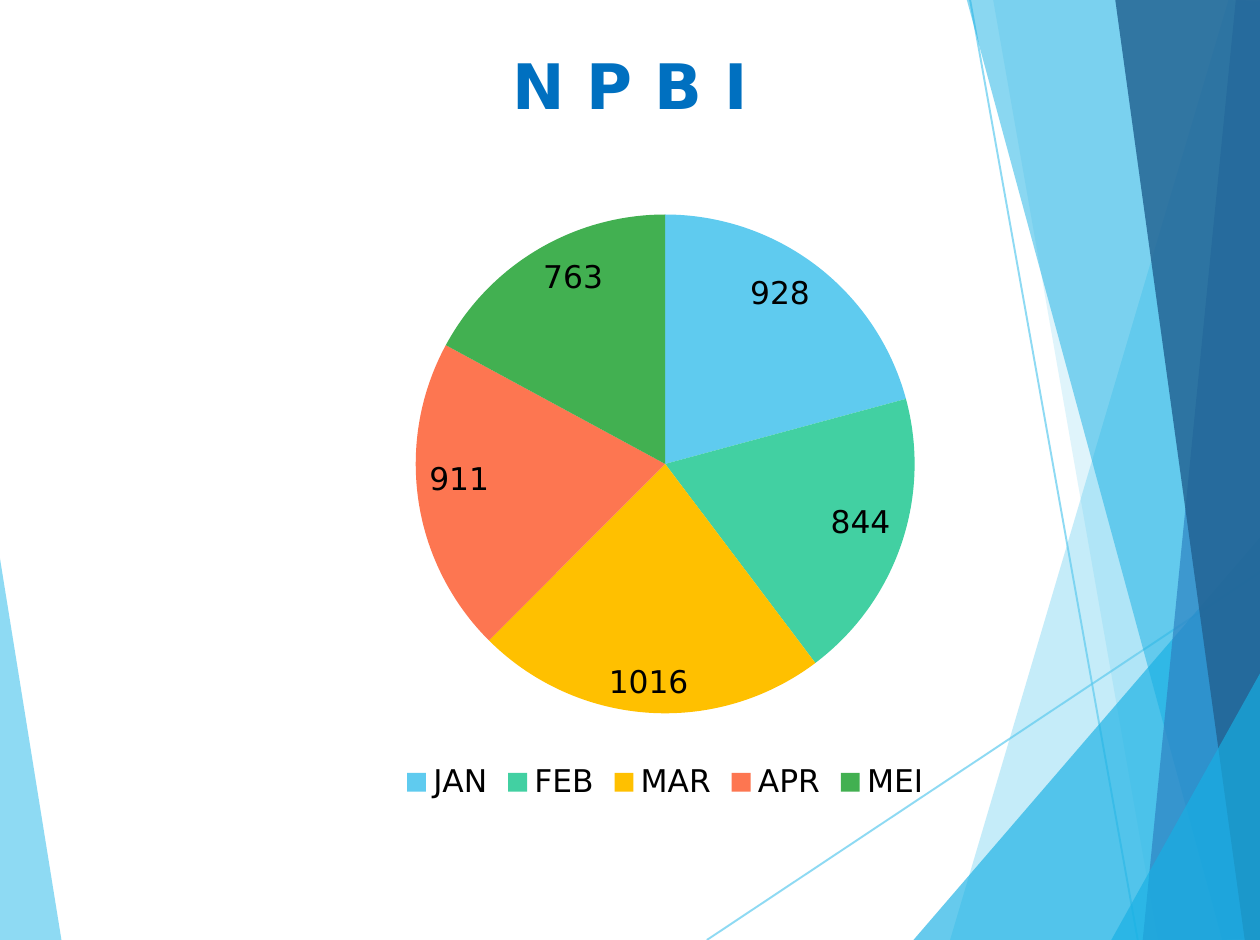
from lxml import etree
from pptx import Presentation
from pptx.chart.data import CategoryChartData as Data
from pptx.dml.color import RGBColor
from pptx.enum.chart import XL_CHART_TYPE as Kind, XL_LABEL_POSITION as Spot
from pptx.enum.chart import XL_LEGEND_POSITION as Side
from pptx.enum.shapes import MSO_CONNECTOR as Link
from pptx.enum.text import MSO_ANCHOR as Anchor, PP_ALIGN as Align
from pptx.oxml.ns import qn
from pptx.util import Inches, Pt

WIDE, HIGH = Inches(6.7), Inches(5)
FONT = "DejaVu Sans"
SKY, AQUA, BLUE, NAVY = "5FCBEF", "17B0E4", "2E83C3", "226292"
MONTHS = [("JAN", 928, SKY), ("FEB", 844, "42D0A2"), ("MAR", 1016, "FFC000"),
          ("APR", 911, "FD7651"), ("MEI", 763, "42B051")]
RAYS = [((56.1, 100), (100.1, 60.8)), ((77, 0), (90.3, 100))]
LEFT = [(SKY, 70, [(-0.1, 58.6), (4.9, 100.2), (-0.1, 100)])]
RIGHT = [
    (SKY, 36, [(97.5, 0), (75.4, 100), (100.1, 100.2), (100.1, 0.2)]),
    (SKY, 20, [(78.8, -0.2), (91.9, 100), (100.1, 100), (100.1, -0.2)]),
    (AQUA, 66, [(72.5, 100), (100, 57.2), (100.1, 100)]),
    (AQUA, 50, [(76.7, -0.2), (97, 100), (100.1, 99.8), (100.1, -0.2)]),
    (BLUE, 70, [(98.1, -0.2), (90.7, 100), (100.1, 100), (100, -0.2)]),
    (NAVY, 82, [(88.5, -0.2), (98.8, 100), (100.1, 100), (100, -0.2)]),
    (AQUA, 66, [(88.2, 100), (100.1, 71.4), (100.1, 100)]),
]


def paint(code):
    """Turn a hex string into a colour."""
    return RGBColor.from_string(code)


def fade(shape, share):
    """Set the opacity of every colour in a shape's fill and line."""
    for node in shape.element.spPr.iter(qn("a:srgbClr")):
        etree.SubElement(node, qn("a:alpha"), val=str(share * 1000))


def place(box, spot):
    """Map a point in percent of a box to slide lengths."""
    left, top, wide, high = box
    return round(left + wide * spot[0] / 100), round(top + high * spot[1] / 100)


def style(font, size, code):
    """Set face, size and colour of a font."""
    font.name, font.size, font.color.rgb = FONT, Pt(size), paint(code)


def add_shards(slide, box, shards):
    """Draw translucent polygons inside a box."""
    for code, share, spots in shards:
        first, *rest = [place(box, spot) for spot in spots]
        pen = slide.shapes.build_freeform(*first)
        pen.add_line_segments(rest, close=True)
        shard = pen.convert_to_shape()
        shard.shadow.inherit = False
        shard.fill.solid()
        shard.fill.fore_color.rgb = paint(code)
        shard.line.fill.background()
        fade(shard, share)


def add_rays(slide, box):
    """Draw the thin crossing lines inside a box."""
    for start, end in RAYS:
        ray = slide.shapes.add_connector(
            Link.STRAIGHT, *place(box, start), *place(box, end))
        ray.line.width = Pt(0.75)
        ray.line.color.rgb = paint(SKY)
        etree.SubElement(ray.element.spPr, qn("a:effectLst"))
        fade(ray, 70)


def add_title(slide, box):
    """Write the centred heading in a box."""
    frame = slide.shapes.add_textbox(*box).text_frame
    frame.word_wrap = True
    frame.vertical_anchor = Anchor.TOP
    para = frame.paragraphs[0]
    para.text, para.alignment = "N P B I", Align.CENTER
    style(para.font, 24, "0070C0")
    para.font.bold = True


def set_plot(chart, **shares):
    """Fix the inner plot area as shares of the chart."""
    area = chart.element.find(".//" + qn("c:plotArea"))
    for old in area.findall(qn("c:layout")):
        area.remove(old)
    layout = etree.Element(qn("c:layout"))
    area.insert(0, layout)
    manual = etree.SubElement(layout, qn("c:manualLayout"))
    marks = {"layoutTarget": "inner", "xMode": "edge", "yMode": "edge", **shares}
    for name, value in marks.items():
        etree.SubElement(manual, qn("c:" + name), val=str(value))


def add_pie(slide, box):
    """Chart the monthly values as a pie in a box."""
    names, values, codes = zip(*MONTHS)
    data = Data()
    data.categories = names
    data.add_series("Series 1", values)
    chart = slide.shapes.add_chart(Kind.PIE, *box, data).chart
    chart.has_title = False
    style(chart.font, 12, "000000")
    chart.has_legend = True
    chart.legend.position = Side.BOTTOM
    chart.legend.include_in_layout = False
    style(chart.legend.font, 12, "000000")
    plot = chart.plots[0]
    plot.vary_by_categories = True
    for spot, code in enumerate(codes):
        fill = plot.series[0].points[spot].format.fill
        fill.solid()
        fill.fore_color.rgb = paint(code)
    plot.has_data_labels = True
    labels = plot.data_labels
    labels.show_value, labels.show_percentage = True, False
    labels.position = Spot.INSIDE_END
    style(labels.font, 12, "000000")
    set_plot(chart, x=0.28, y=0.04, w=0.44, h=0.81)


def main():
    """Build and save the slide."""
    deck = Presentation()
    deck.slide_width, deck.slide_height = WIDE, HIGH
    slide = deck.slides.add_slide(deck.slide_layouts[6])
    page = (0, 0, WIDE, HIGH)
    add_shards(slide, page, LEFT)
    add_rays(slide, page)
    add_shards(slide, page, RIGHT)
    add_title(slide, (*place(page, (5, 4)), *place(page, (90, 16.6))))
    add_pie(slide, (*place(page, (7.8, 20)), *place(page, (90, 66))))
    deck.save("out.pptx")


if __name__ == "__main__":
    main()
